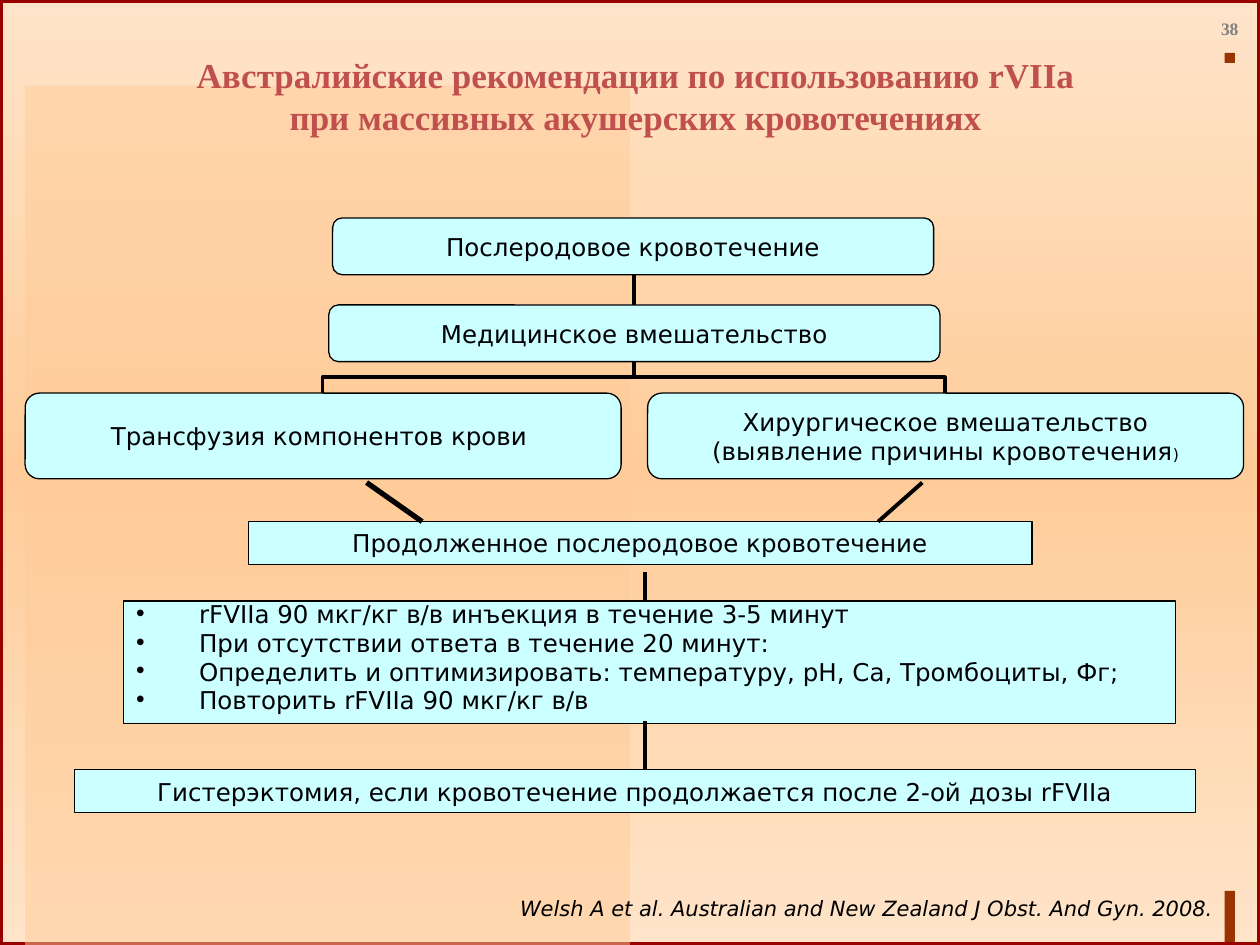
from dataclasses import dataclass

from lxml import etree
from pptx import Presentation
from pptx.dml.color import RGBColor
from pptx.enum import shapes as s, text as t
from pptx.oxml.ns import qn
from pptx.util import Inches, Pt

PALE = RGBColor(0xFF, 0xE4, 0xC9)
PEACH = RGBColor(0xFF, 0xCC, 0x99)
RUST = RGBColor(0x99, 0x33, 0x00)
DARK_RED = RGBColor(0x99, 0x00, 0x00)
TITLE_RED = RGBColor(0xC0, 0x50, 0x4D)
GRAY = RGBColor(0x80, 0x80, 0x80)
CYAN = RGBColor(0xCC, 0xFF, 0xFF)
INK = RGBColor(0x00, 0x00, 0x04)
BLACK = RGBColor(0x00, 0x00, 0x00)
SANS, SERIF = "DejaVu Sans", "Times New Roman"
RECT, ROUNDED = s.MSO_SHAPE.RECTANGLE, s.MSO_SHAPE.ROUNDED_RECTANGLE
CENTER, RIGHT, LEFT = t.PP_ALIGN.CENTER, t.PP_ALIGN.RIGHT, t.PP_ALIGN.LEFT
MIDDLE, TOP = t.MSO_ANCHOR.MIDDLE, t.MSO_ANCHOR.TOP


@dataclass
class Step:
    text: str
    left: float
    top: float
    width: float
    height: float
    kind: s.MSO_SHAPE = ROUNDED


@dataclass
class Link:
    start: tuple[float, float]
    end: tuple[float, float]
    weight: float = 2.25
    elbow: bool = False
    rotation: int = 0


AXIS, LOWER_AXIS = 5.03, 5.12
STEPS = [
    Step("Послеродовое кровотечение", 2.64, 1.73, 4.77, 0.45),
    Step("Медицинское вмешательство", 2.61, 2.42, 4.85, 0.45),
    Step("Трансфузия компонентов крови ", 0.2, 3.12, 4.73, 0.68),
    Step("Хирургическое вмешательство\n(выявление причины кровотечения)",
         5.14, 3.12, 4.73, 0.68),
    Step("Продолженное послеродовое кровотечение", 1.97, 4.14, 6.22, 0.34, RECT),
    Step("Гистерэктомия, если кровотечение продолжается после 2-ой дозы rFVIIa",
         0.59, 6.11, 8.9, 0.34, RECT),
]
# Elbow ends are those of the unrotated box.
BRANCHES = [
    Link((6.39, 1.76), (6.14, 4.23), elbow=True, rotation=90),
    Link((3.67, 1.76), (3.92, 4.23), elbow=True, rotation=270),
    Link((AXIS, 2.42), (AXIS, 2.17)),
]
LOWER_LINKS = [
    Link((7.32, 3.83), (6.97, 4.14)),
    Link((2.91, 3.83), (3.35, 4.14), weight=3),
    Link((LOWER_AXIS, 4.54), (LOWER_AXIS, 4.77)),
    Link((LOWER_AXIS, 5.72), (LOWER_AXIS, 6.11)),
]
TREATMENT = [
    "rFVIIa 90 мкг/кг в/в инъекция в течение 3-5 минут",
    "При отсутствии ответа в течение 20 минут:",
    "Определить и оптимизировать: температуру, рН, Са, Тромбоциты, Фг;",
    "Повторить rFVIIa 90 мкг/кг в/в",
]


def place(shape, left: float, top: float, width: float, height: float) -> None:
    shape.left, shape.top = Inches(left), Inches(top)
    shape.width, shape.height = Inches(width), Inches(height)


def write(shape, content: str, size: float, color: RGBColor, font: str = SANS,
          align=CENTER, anchor=MIDDLE, wrap: bool = True,
          bold: bool = False, italic: bool = False) -> None:
    frame = shape.text_frame
    frame.text = content
    frame.word_wrap, frame.vertical_anchor = wrap, anchor
    frame.auto_size = t.MSO_AUTO_SIZE.NONE
    for paragraph in frame.paragraphs:
        paragraph.alignment = align
        for run in paragraph.runs:
            run.font.size, run.font.name = Pt(size), font
            run.font.bold, run.font.italic = bold, italic
            run.font.color.rgb = color


def outline_box(shape) -> None:
    shape.fill.solid()
    shape.fill.fore_color.rgb = CYAN
    shape.line.color.rgb = BLACK
    shape.line.width = Pt(0.75)


def add_step(slide, step: Step):
    box = slide.shapes.add_shape(step.kind, 0, 0, 0, 0)
    place(box, step.left, step.top, step.width, step.height)
    box.shadow.inherit = False
    outline_box(box)
    write(box, step.text, 14, INK, wrap=step.kind == RECT)
    return box


def add_link(slide, link: Link) -> None:
    kind = s.MSO_CONNECTOR.ELBOW if link.elbow else s.MSO_CONNECTOR.STRAIGHT
    ends = [Inches(value) for value in link.start + link.end]
    line = slide.shapes.add_connector(kind, *ends)
    line.line.color.rgb = BLACK
    line.line.width = Pt(link.weight)
    properties = line._element.spPr
    etree.SubElement(properties, qn("a:effectLst"))
    if link.rotation:
        properties.find(qn("a:xfrm")).set("rot", str(link.rotation * 60000))


def add_decor(slide, left: float, top: float, width: float, height: float,
              color: RGBColor, opacity: int = 100) -> None:
    block = slide.shapes.add_shape(RECT, 0, 0, 0, 0)
    place(block, left, top, width, height)
    block.shadow.inherit = False
    block.line.fill.background()
    block.fill.solid()
    block.fill.fore_color.rgb = color
    if opacity < 100:
        tint = block._element.spPr.find(qn("a:solidFill"))[0]
        etree.SubElement(tint, qn("a:alpha")).set("val", str(opacity * 1000))


def paint_background(slide) -> None:
    fill = slide.background.fill
    fill.gradient()
    fill.gradient_angle = 270
    stops = next(slide._element.iter(qn("a:gsLst")))
    for stop in list(stops):
        stops.remove(stop)
    for position, color in ((0, PALE), (50, PEACH), (100, PALE)):
        stop = etree.SubElement(stops, qn("a:gs"), pos=str(position * 1000))
        etree.SubElement(stop, qn("a:srgbClr"), val=str(color))


def bring_to_front(slide, shape) -> None:
    slide.shapes._spTree.append(shape._element)


def add_label(slide, bounds: tuple[float, ...], content: str, *style, **options) -> None:
    label = slide.shapes.add_textbox(0, 0, 0, 0)
    place(label, *bounds)
    write(label, content, *style, **options)


def fill_treatment(slide, body) -> None:
    bring_to_front(slide, body)
    place(body, 0.98, 4.77, 8.35, 0.97)
    outline_box(body)
    write(body, "\n".join(TREATMENT), 14, INK, align=LEFT, anchor=TOP)
    for paragraph in body.text_frame.paragraphs:
        paragraph.line_spacing = 0.7
        paragraph.space_before = Pt(4.6)
        properties = paragraph._p.get_or_add_pPr()
        properties.set("marL", str(Inches(0.5)))
        properties.set("indent", str(Inches(-0.5)))


def main() -> None:
    deck = Presentation()
    deck.slide_width, deck.slide_height = Inches(10), Inches(7.5)
    slide = deck.slides.add_slide(deck.slide_layouts[1])
    title, body = slide.placeholders
    paint_background(slide)

    add_decor(slide, 9.72, 7.07, 0.08, 0.42, RUST)
    add_decor(slide, 9.72, 0.42, 0.08, 0.08, RUST)
    border = slide.shapes.add_shape(RECT, 0, 0, deck.slide_width, deck.slide_height)
    border.shadow.inherit = False
    border.fill.background()
    border.line.color.rgb = DARK_RED
    border.line.width = Pt(3)
    add_decor(slide, 0.2, 0.68, 4.8, 6.82, PEACH, opacity=50)
    add_label(slide, (9.62, 0.13, 0.28, 0.2), "38", 10, GRAY, SERIF,
              wrap=False, bold=True)

    bring_to_front(slide, title)
    place(title, 0, 0.28, 10.16, 0.95)
    write(title, "Австралийские рекомендации по использованию rVIIa \v"
          "при массивных акушерских кровотечениях ", 20, TITLE_RED, SERIF, bold=True)

    for link in BRANCHES:
        add_link(slide, link)
    boxes = [add_step(slide, step) for step in STEPS]
    surgery_note = boxes[3].text_frame.paragraphs[1]
    surgery_note.runs[0].text = surgery_note.text.removesuffix(")")
    bracket = surgery_note.add_run()
    bracket.text = ")"
    bracket.font.size, bracket.font.name = Pt(9), SANS
    bracket.font.color.rgb = INK

    fill_treatment(slide, body)
    for link in LOWER_LINKS:
        add_link(slide, link)
    add_label(slide, (0.47, 7.06, 9.26, 0.3),
              "Welsh A et al. Australian and New Zealand J Obst. And Gyn. 2008.",
              12, BLACK, align=RIGHT, anchor=TOP, italic=True)
    deck.save("out.pptx")


if __name__ == "__main__":
    main()
